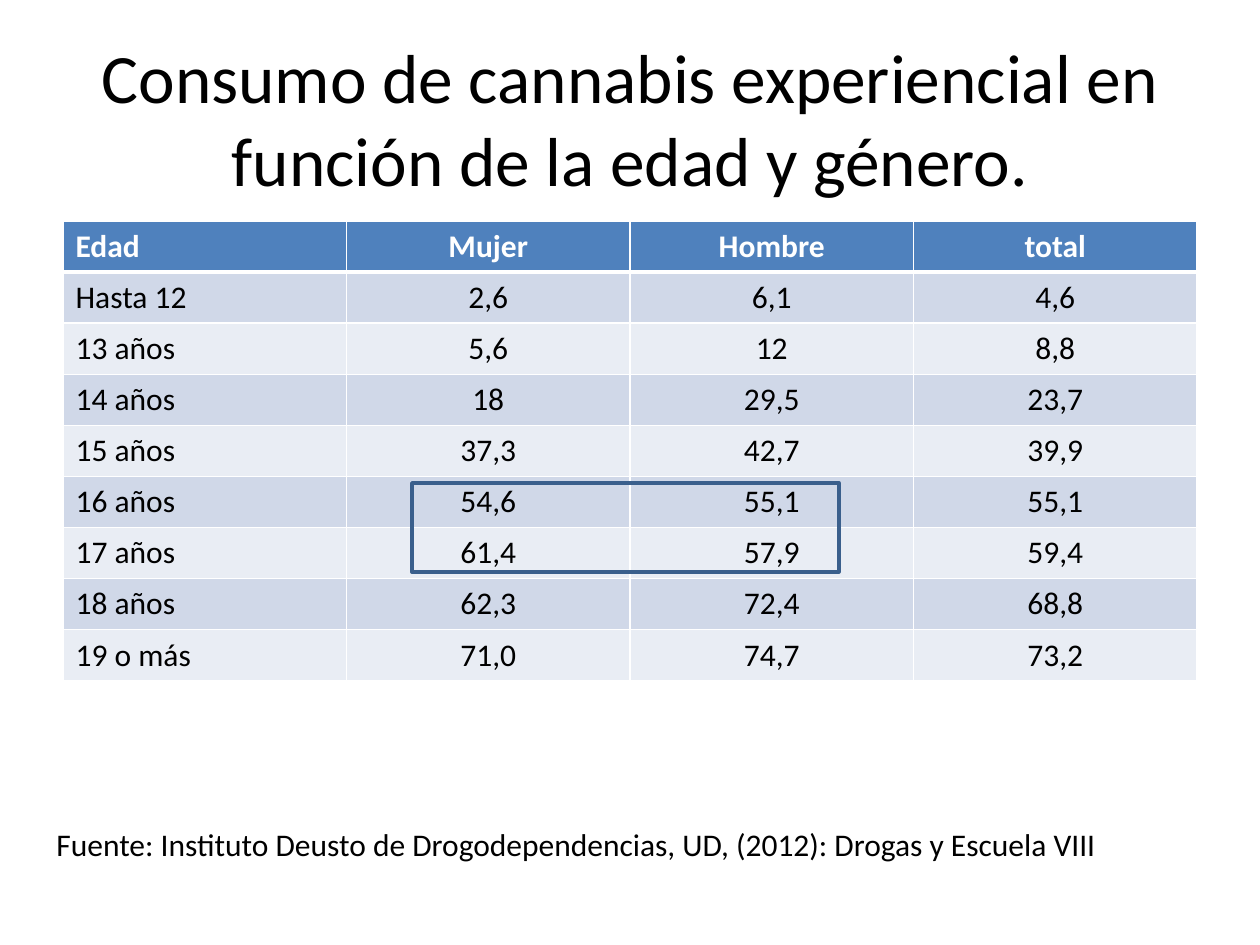
from dataclasses import dataclass

from lxml import etree
from pptx import Presentation
from pptx import util as u
from pptx.dml.color import RGBColor
from pptx.enum import shapes, text
from pptx.oxml import ns

EMU_PER_PX = 914400 / 126
FONT = "Calibri"
COLORS = {
    "ink": "000000",
    "white": "FFFFFF",
    "header": "4F81BD",
    "band_dark": "D0D8E8",
    "band_light": "E9EDF4",
    "highlight": "3A5F8C",
}
HEADINGS = ["Edad", "Mujer", "Hombre", "total"]
AGE_ROWS = [
    ["Hasta 12", "2,6", "6,1", "4,6"],
    ["13 años", "5,6", "12", "8,8"],
    ["14 años", "18", "29,5", "23,7"],
    ["15 años", "37,3", "42,7", "39,9"],
    ["16 años", "54,6", "55,1", "55,1"],
    ["17 años", "61,4", "57,9", "59,4"],
    ["18 años", "62,3", "72,4", "68,8"],
    ["19 o más", "71,0", "74,7", "73,2"],
]


@dataclass(frozen=True)
class Box:
    left: int
    top: int
    width: int
    height: int

    def emu(self) -> list[int]:
        return [px(v) for v in (self.left, self.top, self.width, self.height)]


@dataclass(frozen=True)
class Label:
    box: Box
    words: str
    size: float
    align: text.PP_ALIGN
    anchor: text.MSO_ANCHOR


@dataclass(frozen=True)
class RowStyle:
    fill: str
    ink: str
    bold: bool
    top_pt: int
    bottom_pt: int


TABLE_BOX = Box(63, 221, 1134, 460)
HIGHLIGHT_BOX = Box(412, 483, 427, 89)
LABELS = [
    Label(Box(63, 38, 1134, 158),
          "Consumo de cannabis experiencial en función de la edad y género.",
          39.6, text.PP_ALIGN.CENTER, text.MSO_ANCHOR.MIDDLE),
    Label(Box(44, 819, 1101, 50),
          "Fuente: Instituto Deusto de Drogodependencias, UD, (2012): Drogas y Escuela VIII",
          18, text.PP_ALIGN.LEFT, text.MSO_ANCHOR.TOP),
]


def px(value: float) -> u.Emu:
    return u.Emu(round(value * EMU_PER_PX))


def rgb(name: str) -> RGBColor:
    return RGBColor.from_string(COLORS[name])


def add_run(p, words: str, size: float, ink: str = "ink", bold: bool = False) -> None:
    r = p.add_run()
    r.text = words
    r.font.name = FONT
    r.font.size = u.Pt(size)
    r.font.bold = bold
    r.font.color.rgb = rgb(ink)


def add_label(s, label: Label) -> None:
    tf = s.shapes.add_textbox(*label.box.emu()).text_frame
    tf.word_wrap = True
    tf.vertical_anchor = label.anchor
    p = tf.paragraphs[0]
    p.alignment = label.align
    add_run(p, label.words, label.size)


def set_borders(cell, style: RowStyle) -> None:
    tc_pr = cell._tc.get_or_add_tcPr()
    widths = {"lnL": 1, "lnR": 1, "lnT": style.top_pt, "lnB": style.bottom_pt}
    for tag, width in widths.items():
        ln = etree.SubElement(tc_pr, ns.qn(f"a:{tag}"), w=str(u.Pt(width)))
        fill = etree.SubElement(ln, ns.qn("a:solidFill"))
        etree.SubElement(fill, ns.qn("a:srgbClr"), val=COLORS["white"])


def row_style(row: int) -> RowStyle:
    """Header first, then alternating bands; a thick rule parts the two."""
    if row == 0:
        return RowStyle("header", "white", True, 1, 3)
    band = "band_dark" if row % 2 else "band_light"
    return RowStyle(band, "ink", False, 3 if row == 1 else 1, 1)


def add_age_table(s, box: Box, rows: list[list[str]]) -> None:
    table = s.shapes.add_table(len(rows), len(rows[0]), *box.emu()).table
    for i, values in enumerate(rows):
        table.rows[i].height = px(box.height / len(rows))
        style = row_style(i)
        for j, value in enumerate(values):
            cell = table.cell(i, j)
            set_borders(cell, style)
            cell.fill.solid()
            cell.fill.fore_color.rgb = rgb(style.fill)
            p = cell.text_frame.paragraphs[0]
            p.alignment = text.PP_ALIGN.CENTER if j else text.PP_ALIGN.LEFT
            add_run(p, value, 18, style.ink, style.bold)


def add_highlight(s, box: Box) -> None:
    sp = s.shapes.add_shape(shapes.MSO_SHAPE.RECTANGLE, *box.emu())
    sp.shadow.inherit = False
    sp.fill.background()
    sp.line.color.rgb = rgb("highlight")
    sp.line.width = u.Pt(2)


def main() -> None:
    prs = Presentation()
    prs.slide_width, prs.slide_height = px(1260), px(945)
    s = prs.slides.add_slide(prs.slide_layouts[6])
    title, source = LABELS
    add_label(s, title)
    add_age_table(s, TABLE_BOX, [HEADINGS, *AGE_ROWS])
    add_label(s, source)
    add_highlight(s, HIGHLIGHT_BOX)
    prs.save("out.pptx")


if __name__ == "__main__":
    main()
